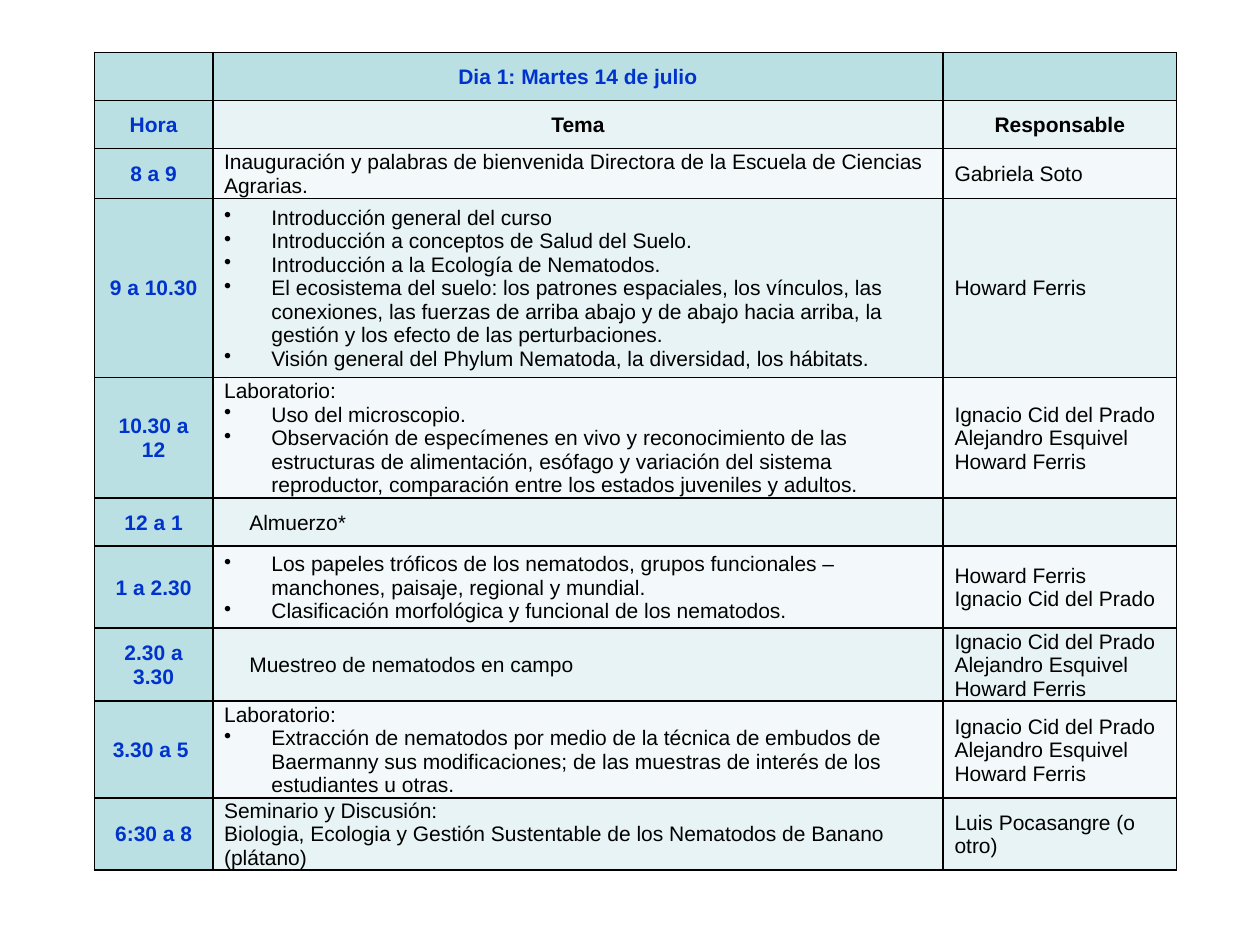
import pptx
import pptx.util
import pptx.dml.color
import pptx.enum.text
import pptx.oxml
import pptx.oxml.ns

Pt = pptx.util.Pt
ALIGN = pptx.enum.text.PP_ALIGN
MID = pptx.enum.text.MSO_ANCHOR.MIDDLE

HUES = {"head": "BBE0E3", "even": "E7F3F4", "odd": "F3F9FA",
        "blue": "0033CC", "ink": "000000"}
COLS = [67.6, 417.4, 133.4]
CID, ESQ, HOW = "Ignacio Cid del Prado", "Alejandro Esquivel", "Howard Ferris"

# Height, hour, topics and speakers; "•" marks a bullet, ">" an indent
ROWS = [
    (27.4, "", ["Dia 1: Martes 14 de julio"], []),
    (27.4, "Hora", ["Tema"], ["Responsable"]),
    (28.6, "8 a 9",
     ["Inauguración y palabras de bienvenida Directora de la Escuela de "
      "Ciencias Agrarias."], ["Gabriela Soto"]),
    (102.3, "9 a 10.30",
     ["•Introducción general del curso",
      "•Introducción a conceptos de Salud del Suelo.",
      "•Introducción a la Ecología de Nematodos.",
      "•El ecosistema del suelo: los patrones espaciales, los vínculos, las "
      "conexiones, las fuerzas de arriba abajo y de abajo hacia arriba, la "
      "gestión y los efecto de las perturbaciones.",
      "•Visión general del Phylum Nematoda, la diversidad, los hábitats."],
     [HOW]),
    (69.1, "10.30 a 12",
     ["Laboratorio:",
      "•Uso del microscopio.",
      "•Observación de especímenes en vivo y reconocimiento de las "
      "estructuras de alimentación, esófago y variación del sistema "
      "reproductor, comparación entre los estados juveniles y adultos."],
     [CID, ESQ, HOW]),
    (27.4, "12 a 1", [">Almuerzo*"], []),
    (46.9, "1 a 2.30",
     ["•Los papeles tróficos de los nematodos, grupos funcionales "
      "–manchones, paisaje, regional y mundial.",
      "•Clasificación morfológica y funcional de los nematodos."],
     [HOW, CID]),
    (41.7, "2.30 a 3.30", [">Muestreo de nematodos en campo"],
     [CID, ESQ, HOW]),
    (55.4, "3.30 a 5 ",
     ["Laboratorio:",
      "•Extracción de nematodos por medio de la técnica de embudos de "
      "Baermanny sus modificaciones; de las muestras de interés de los "
      "estudiantes u otras."], [CID, ESQ, HOW]),
    (41, "6:30 a 8",
     ["Seminario y Discusión:",
      "Biologia, Ecologia y Gestión Sustentable de los Nematodos de Banano "
      "(plátano)"], ["Luis Pocasangre (o otro)"]),
]


class Deck:
    def __init__(self, face, size):
        self.face, self.size = face, size
        self.prs = pptx.Presentation()
        self.prs.slide_width, self.prs.slide_height = Pt(720), Pt(540)
        self.slide = self.prs.slides.add_slide(self.prs.slide_layouts[6])

    def hue(self, name):
        return pptx.dml.color.RGBColor.from_string(HUES[name])

    def grid(self, left, top, cols, highs):
        frame = self.slide.shapes.add_table(
            len(highs), len(cols), Pt(left), Pt(top),
            Pt(sum(cols)), Pt(sum(highs)))
        table = frame.table
        for col, wide in zip(table.columns, cols):
            col.width = Pt(wide)
        for row, high in zip(table.rows, highs):
            row.height = Pt(high)
        return table

    def edge(self, cell):
        props = cell._tc.get_or_add_tcPr()
        for side in "LRTB":
            props.append(pptx.oxml.parse_xml(
                f'<a:ln{side} {pptx.oxml.ns.nsdecls("a")} w="{Pt(1)}">'
                f'<a:solidFill><a:srgbClr val="{HUES["ink"]}"/></a:solidFill>'
                f'</a:ln{side}>'))

    def indent(self, para, left, mark=None):
        props = para._p.get_or_add_pPr()
        props.set("marL", str(Pt(left)))
        props.set("indent", str(-Pt(left) if mark else 0))
        if mark:
            props.append(pptx.oxml.parse_xml(
                f'<a:buChar {pptx.oxml.ns.nsdecls("a")} char="{mark}"/>'))

    def cell(self, cell, lines, fill, ink, bold):
        self.edge(cell)
        cell.fill.solid()
        cell.fill.fore_color.rgb = self.hue(fill)
        cell.vertical_anchor = MID
        cell.margin_left = cell.margin_right = Pt(6.5)
        cell.margin_top, cell.margin_bottom = Pt(0.7), Pt(0)
        text = cell.text_frame
        for num, line in enumerate(lines or [""]):
            para = text.add_paragraph() if num else text.paragraphs[0]
            para.text = line.lstrip("•>")
            para.alignment = ALIGN.CENTER if bold else ALIGN.LEFT
            if line.startswith("•"):
                self.indent(para, 27, "•")
            elif line.startswith(">"):
                self.indent(para, 14.4)
            font = para.font
            font.name, font.size, font.bold = self.face, Pt(self.size), bold
            font.color.rgb = self.hue(ink)


def main():
    deck = Deck("Arial", 12)

    # Timetable
    table = deck.grid(54, 30, COLS, [row[0] for row in ROWS])
    for r, (high, hour, topics, names) in enumerate(ROWS):
        for c, lines in enumerate([[hour], topics, names]):
            head = r == 0 or c == 0
            band = "odd" if r % 2 == 0 else "even"
            deck.cell(table.cell(r, c), lines, "head" if head else band,
                      "blue" if head else "ink", head or r == 1)

    deck.prs.save("out.pptx")


if __name__ == "__main__":
    main()
